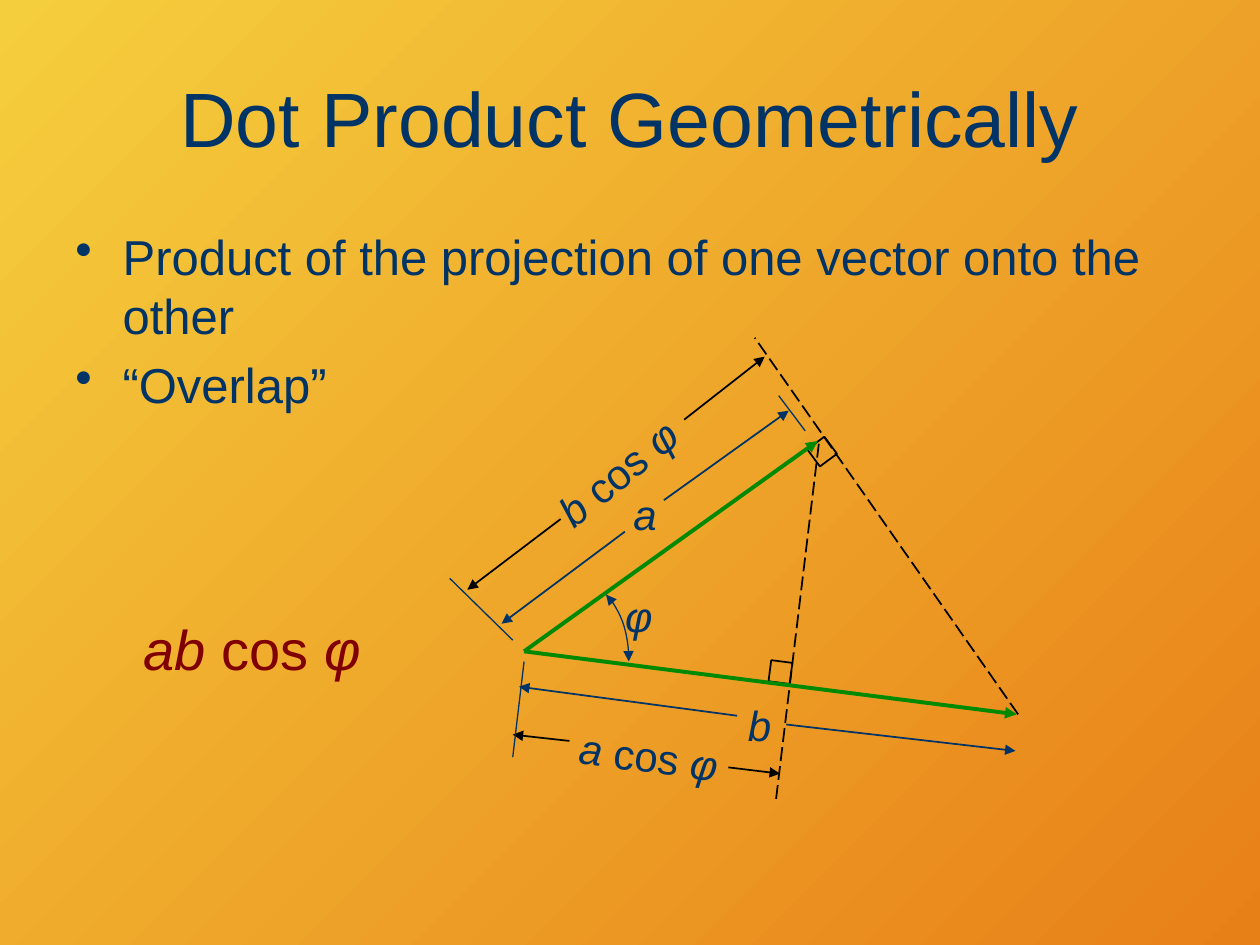
from typing import NamedTuple

from lxml.etree import SubElement
from pptx import Presentation
from pptx.dml.color import RGBColor
from pptx.enum.dml import MSO_LINE as Dash
from pptx.enum.shapes import MSO_CONNECTOR as Connector, MSO_SHAPE as Shape
from pptx.enum.text import MSO_ANCHOR as Anchor, PP_ALIGN as Align
from pptx.oxml.ns import qn
from pptx.util import Pt

NAVY, BLACK, GREEN, MAROON = "003366", "000000", "008901", "800000"
FONT = "Arial"
Point = tuple[float, float]


class Segment(NamedTuple):
    start: Point
    end: Point
    color: str = BLACK
    width: float = 1
    arrow: bool = False
    dashed: bool = False


class Label(NamedTuple):
    """Terms alternate between italic and upright, starting with italic."""
    terms: tuple[str, ...]
    left: float
    top: float
    width: float
    height: float = 36
    rotation: float = 0
    size: float = 24
    color: str = NAVY


class RightAngle(NamedTuple):
    left: float
    top: float
    rotation: float


ORIGIN = (299.5, 372.2)
A_TIP = (467.3, 252)
B_TIP = (581, 408.2)

RIGHT_ANGLES = [RightAngle(463.7, 252, 53.5), RightAngle(439.9, 378, 7.3)]
RIGHT_ANGLE_SIDE = 12.2

SEGMENTS = [
    # Perpendiculars dropped for each projection
    Segment((581.8, 408.2), (431.3, 193), dashed=True),
    Segment((443.5, 456.5), (468, 252.7), dashed=True),
    # Dimension of b cos φ
    Segment((320.4, 296.6), (267.1, 337), arrow=True),
    Segment((391, 239.8), (437, 203.8), arrow=True),
    # Dimension of a cos φ
    Segment((416.2, 438.5), (445.7, 442.1), arrow=True),
    Segment((325.4, 423.4), (293, 419.8), arrow=True),
    # Extension lines
    Segment((299.5, 378), (293, 432.7), NAVY, 0.75),
    Segment((293, 365.8), (257, 330.5), NAVY, 0.75),
    Segment((460.1, 246.2), (445, 226.1), NAVY, 0.75),
    # Vectors
    Segment(ORIGIN, A_TIP, GREEN, 2.25, arrow=True),
    Segment(ORIGIN, B_TIP, GREEN, 2.25, arrow=True),
    # Dimension of b
    Segment((449.3, 414), (580.3, 429.1), NAVY, arrow=True),
    Segment((421.2, 409), (296.6, 392.4), NAVY, arrow=True),
    # Dimension of a
    Segment((357.1, 303.8), (286.6, 356.4), NAVY, arrow=True),
    Segment((379.4, 285.8), (450.7, 234.7), NAVY, arrow=True),
]

LABELS = [
    Label(("b ", "cos ", "φ"), 304.6, 252, 96.5, rotation=320.8),
    Label(("a ", "cos ", "φ"), 318.2, 414, 105.1, rotation=7.4),
    Label(("a",), 353.5, 275.8, 30.2),
    Label(("b",), 419, 396, 30.2),
    Label(("φ",), 349.9, 334.1, 30.2),
    Label(("ab", " cos ", "φ"), 66.2, 347.8, 156.2, 48.2, size=32, color=MAROON),
]

ANGLE_ARC = [(346.3, 339.8), (352.1, 344.2), (360, 363.6), (359.3, 378)]
BULLETS = ["Product of the projection of one vector onto the other", "“Overlap”"]


def rgb(color: str) -> RGBColor:
    return RGBColor.from_string(color)


def style_font(font, size: float, color: str, italic: bool = False) -> None:
    font.name, font.size, font.italic = FONT, Pt(size), italic
    font.color.rgb = rgb(color)


def style_line(shape, color: str, width: float, *arrow_ends: str) -> None:
    """Format the line; arrow_ends are headEnd and tailEnd."""
    shape.line.color.rgb = rgb(color)
    shape.line.width = Pt(width)
    outline = shape._element.spPr.find(qn("a:ln"))
    for end in arrow_ends:
        SubElement(outline, qn(f"a:{end}"), type="triangle")


def paint_background(slide) -> None:
    fill = slide.background.fill
    fill.gradient()
    fill.gradient_angle = 315
    for stop, color in zip(fill.gradient_stops, ("F5CE3D", "E88018")):
        stop.color.rgb = rgb(color)


def add_title(slide, text: str) -> None:
    title = slide.shapes.title
    title.left, title.top, title.width, title.height = Pt(36), Pt(21.6), Pt(648), Pt(90)
    frame = title.text_frame
    frame.text = text
    frame.vertical_anchor = Anchor.MIDDLE
    frame.paragraphs[0].alignment = Align.CENTER
    style_font(frame.paragraphs[0].runs[0].font, 44, NAVY)


def add_bullets(slide, items: list[str]) -> None:
    frame = slide.shapes.add_textbox(Pt(36), Pt(126), Pt(642.2), Pt(131.8)).text_frame
    frame.word_wrap = True
    frame.text = "\n".join(items)
    for paragraph in frame.paragraphs:
        paragraph.space_before = Pt(6)
        style_font(paragraph.runs[0].font, 28, NAVY)
        properties = paragraph._p.get_or_add_pPr()
        properties.set("marL", str(Pt(27)))
        properties.set("indent", str(-Pt(27)))
        SubElement(properties, qn("a:buChar"), char="•")


def add_right_angle(slide, mark: RightAngle) -> None:
    square = slide.shapes.add_shape(Shape.RECTANGLE, Pt(mark.left), Pt(mark.top),
                                    Pt(RIGHT_ANGLE_SIDE), Pt(RIGHT_ANGLE_SIDE))
    square.rotation = mark.rotation
    square.shadow.inherit = False
    square.fill.background()
    style_line(square, BLACK, 1)


def add_segment(slide, segment: Segment) -> None:
    line = slide.shapes.add_connector(
        Connector.STRAIGHT, *(Pt(value) for value in segment.start + segment.end))
    if segment.dashed:
        line.line.dash_style = Dash.LONG_DASH
    style_line(line, segment.color, segment.width, *(["tailEnd"] if segment.arrow else []))
    SubElement(line._element.spPr, qn("a:effectLst"))


def add_curve(slide, points: list[Point]) -> None:
    """Draw one cubic Bézier curve with an arrowhead at both ends."""
    start, *controls = [(Pt(x), Pt(y)) for x, y in points]
    builder = slide.shapes.build_freeform(*start)
    builder.add_line_segments(controls, close=False)
    curve = builder.convert_to_shape()
    outline = next(curve._element.iter(qn("a:path")))
    bezier = SubElement(outline, qn("a:cubicBezTo"))
    for straight in outline.findall(qn("a:lnTo")):
        bezier.append(straight[0])
        outline.remove(straight)
    curve.shadow.inherit = False
    curve.fill.background()
    style_line(curve, NAVY, 0.75, "headEnd", "tailEnd")


def add_label(slide, label: Label) -> None:
    box = slide.shapes.add_textbox(Pt(label.left), Pt(label.top),
                                   Pt(label.width), Pt(label.height))
    box.rotation = label.rotation
    box.text_frame.word_wrap = False
    paragraph = box.text_frame.paragraphs[0]
    paragraph.alignment = Align.CENTER
    for index, term in enumerate(label.terms):
        run = paragraph.add_run()
        run.text = term
        style_font(run.font, label.size, label.color, italic=index % 2 == 0)


def main() -> None:
    deck = Presentation()
    deck.slide_width, deck.slide_height = Pt(720), Pt(540)
    slide = deck.slides.add_slide(deck.slide_layouts[5])
    paint_background(slide)
    add_title(slide, "Dot Product Geometrically")
    add_bullets(slide, BULLETS)
    for mark in RIGHT_ANGLES:
        add_right_angle(slide, mark)
    for segment in SEGMENTS:
        add_segment(slide, segment)
    add_curve(slide, ANGLE_ARC)
    for label in LABELS:
        add_label(slide, label)
    deck.save("out.pptx")


if __name__ == "__main__":
    main()
